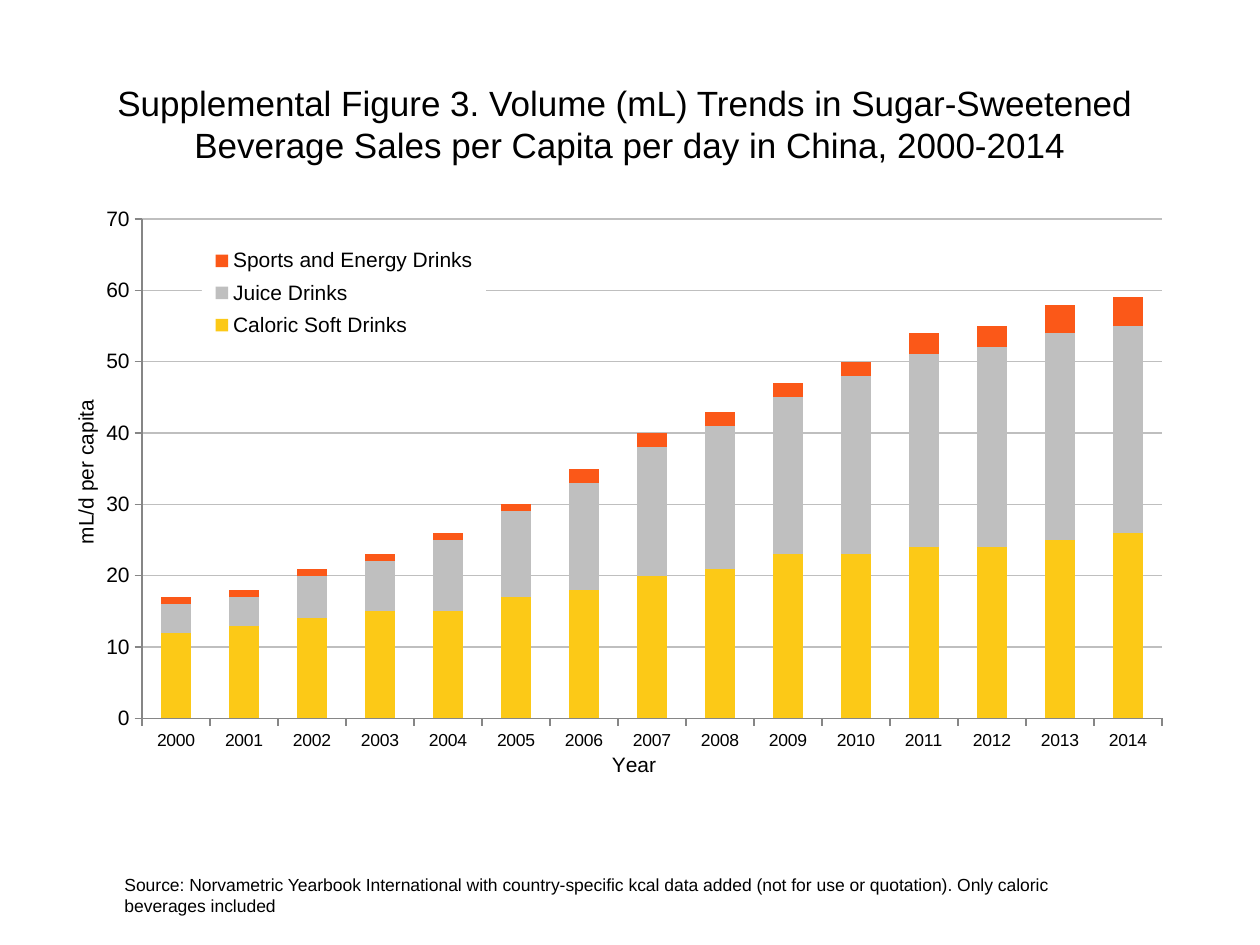
from lxml import etree
from pptx import Presentation
from pptx import util as u
from pptx.chart.data import CategoryChartData
from pptx.dml.color import RGBColor
from pptx.enum import chart as ch, text as tx
from pptx.oxml import parse_xml
from pptx.oxml.ns import nsdecls, qn

PX = 914400 / 126
CHART = (5, 84, 1225, 699)
COLORS = {"ink": "000000", "paper": "FFFFFF", "grid": "BFBFBF", "axis": "868686",
          "soft": "FCC917", "juice": "BFBFBF", "sports": "FB5818"}
rgb = {name: RGBColor.from_string(value) for name, value in COLORS.items()}


def write(frame, content, size, align=tx.PP_ALIGN.LEFT, anchor=None):
    paragraph = frame.paragraphs[0]
    paragraph.text = content
    paragraph.alignment = align
    if anchor is not None:
        frame.vertical_anchor = anchor
    for run in paragraph.runs:
        run.font.size, run.font.name, run.font.bold = u.Pt(size), "Arial", False
        run.font.color.rgb = rgb["ink"]


def place(part, x, y, w=None, h=None, inner=False):
    """Fix a chart part at a place on the slide, given in px."""
    for old in part.findall(qn("c:layout")):
        part.remove(old)
    layout = etree.Element(qn("c:layout"))
    manual = etree.SubElement(layout, qn("c:manualLayout"))
    left, top, width, height = CHART
    settings = [("layoutTarget", "inner" if inner else None), ("xMode", "edge"),
                ("yMode", "edge"), ("x", (x - left) / width), ("y", (y - top) / height),
                ("w", w and w / width), ("h", h and h / height)]
    for tag, value in settings:
        if value is not None:
            etree.SubElement(manual, qn("c:" + tag)).set("val", str(value))
    overlay = part.find(qn("c:overlay"))
    part.insert(0 if overlay is None else part.index(overlay), layout)


prs = Presentation()
prs.slide_width, prs.slide_height = u.Inches(10), u.Inches(7.5)
slide = prs.slides.add_slide(prs.slide_layouts[5])

# Stacked sales by year
sales = CategoryChartData(number_format="#,##0")
sales.categories = [str(year) for year in range(2000, 2015)]
drinks = [
    ("Caloric Soft Drinks", "soft", [12, 13, 14, 15, 15, 17, 18, 20, 21, 23, 23, 24, 24, 25, 26]),
    ("Juice Drinks", "juice", [4, 4, 6, 7, 10, 12, 15, 18, 20, 22, 25, 27, 28, 29, 29]),
    ("Sports and Energy Drinks", "sports", [1, 1, 1, 1, 1, 1, 2, 2, 2, 2, 2, 3, 3, 4, 4]),
]
for drink, _, volumes in drinks:
    sales.add_series(drink, volumes)
box = [round(n * PX) for n in CHART]
chart = slide.shapes.add_chart(ch.XL_CHART_TYPE.COLUMN_STACKED, *box, sales).chart
chart.has_title = False
chart.font.size, chart.font.name = u.Pt(10), "Arial"
chart.font.color.rgb = rgb["ink"]

columns = chart.plots[0]
columns.gap_width, columns.overlap, columns.vary_by_categories = 124, 100, False
for series, (_, color, _) in zip(columns.series, drinks):
    series.format.fill.solid()
    series.format.fill.fore_color.rgb = rgb[color]
place(chart._chartSpace.chart.plotArea, 142, 220, 1020, 503, inner=True)

years, volume = chart.category_axis, chart.value_axis
axes = [(years, "Year", 10, 608, 753), (volume, "mL/d per capita", 12, 69, 399)]
for axis, label, size, x, y in axes:
    write(axis.axis_title.text_frame, label, 12, align=tx.PP_ALIGN.CENTER)
    place(axis.axis_title._element, x, y)
    axis.major_tick_mark = ch.XL_TICK_MARK.OUTSIDE
    axis.minor_tick_mark = ch.XL_TICK_MARK.NONE
    axis.format.line.color.rgb = rgb["axis"]
    axis.format.line.width = u.Pt(0.75)
    axis.tick_labels.font.size, axis.tick_labels.font.name = u.Pt(size), "Arial"
volume.axis_title.text_frame._txBody.bodyPr.set("rot", "-5400000")
volume.minimum_scale, volume.maximum_scale, volume.major_unit = 0, 70, 10
volume.major_gridlines.format.line.color.rgb = rgb["grid"]
volume.major_gridlines.format.line.width = u.Pt(0.75)

chart.has_legend = True
legend = chart.legend
legend.position = ch.XL_LEGEND_POSITION.RIGHT
legend.include_in_layout = False
legend.font.size, legend.font.name = u.Pt(12), "Arial"
place(legend._element, 202, 241, 284, 107)
legend._element.find(qn("c:overlay")).addnext(parse_xml(
    f'<c:spPr {nsdecls("c", "a")}><a:solidFill><a:srgbClr val="{COLORS["paper"]}"/>'
    "</a:solidFill><a:ln><a:noFill/></a:ln></c:spPr>"))

# Source note and title
source = slide.shapes.add_textbox(*[round(n * PX) for n in (112, 868, 964, 55)]).text_frame
source.word_wrap = True
write(source, "Source: Norvametric Yearbook International with country-specific kcal data added "
      "(not for use or quotation). Only caloric beverages included", 10)

title = slide.shapes.title
title.left, title.top, title.width, title.height = [round(n * PX) for n in (0, 52, 1260, 144)]
write(title.text_frame, "Supplemental Figure 3. Volume (mL) Trends in Sugar-Sweetened \n"
      "Beverage Sales per Capita per day in China, 2000-2014", 20,
      align=tx.PP_ALIGN.CENTER, anchor=tx.MSO_ANCHOR.MIDDLE)

prs.save("out.pptx")
